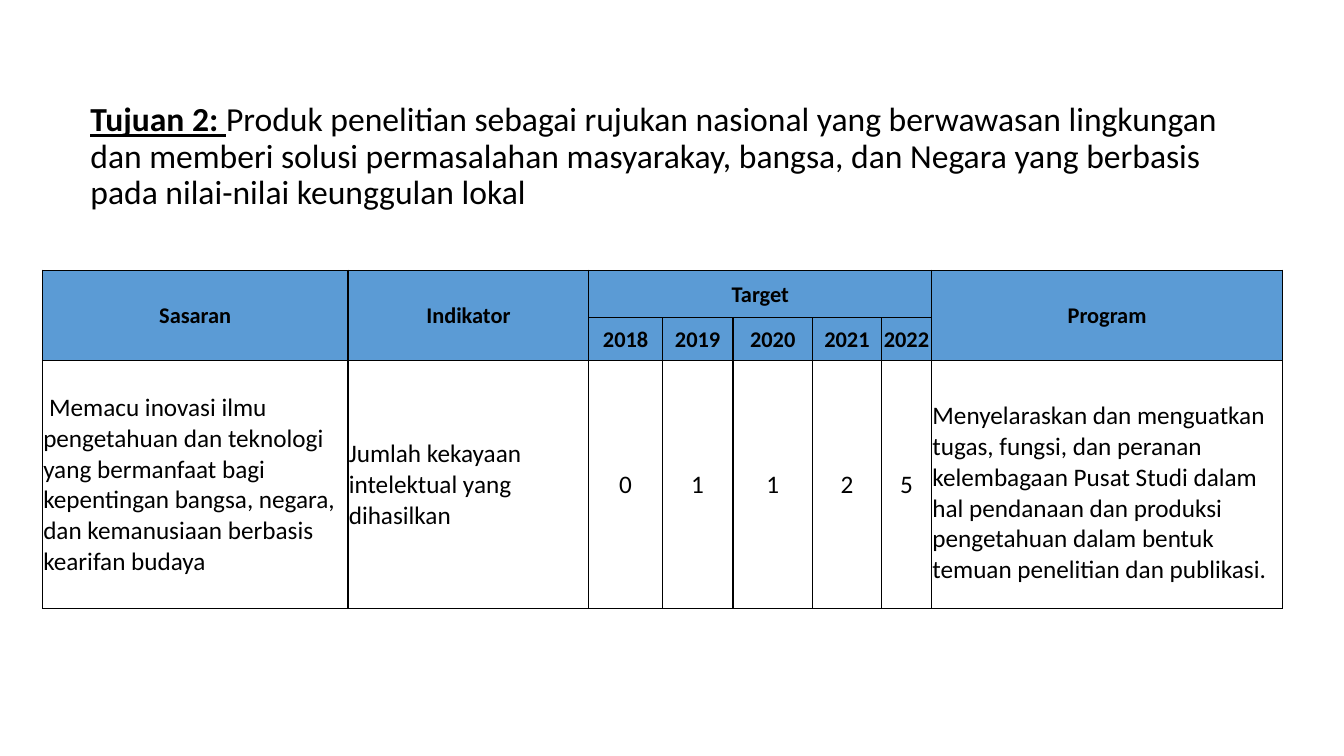
"""Builds the slide on goal 2: heading and target table."""
from lxml import etree
from pptx import Presentation
from pptx.dml.color import RGBColor
from pptx.enum.text import MSO_ANCHOR, PP_ALIGN
from pptx.oxml.ns import qn
from pptx.util import Cm, Pt

BLACK = RGBColor(0x00, 0x00, 0x00)
BLUE = RGBColor(0x5B, 0x9B, 0xD5)
MIDDLE, BOTTOM = MSO_ANCHOR.MIDDLE, MSO_ANCHOR.BOTTOM
LEFT, CENTER = PP_ALIGN.LEFT, PP_ALIGN.CENTER
FONT = "Calibri"


def add_run(p, text, size, bold=False, underline=False):
    r = p.add_run()
    r.text = text
    r.font.name = FONT
    r.font.size = Pt(size)
    r.font.bold = bold
    r.font.underline = underline
    r.font.color.rgb = BLACK


def add_borders(cell):
    tcPr = cell._tc.get_or_add_tcPr()
    for side in ("lnL", "lnR", "lnT", "lnB"):
        ln = etree.SubElement(tcPr, qn(f"a:{side}"), w=str(Pt(1)))
        fill = etree.SubElement(ln, qn("a:solidFill"))
        etree.SubElement(fill, qn("a:srgbClr"), val=str(BLACK))


prs = Presentation()
prs.slide_width, prs.slide_height = Cm(33.87), Cm(19.05)
s = prs.slides.add_slide(prs.slide_layouts[6])

title = s.shapes.add_textbox(Cm(2.03), Cm(2.54), Cm(29.21), Cm(2.84))
tf = title.text_frame
tf.word_wrap = True
tf.vertical_anchor = MIDDLE
p = tf.paragraphs[0]
p.line_spacing = 0.9
add_run(p, "Tujuan 2: ", 24, bold=True, underline=True)
add_run(p, "Produk penelitian sebagai rujukan nasional yang berwawasan lingkungan "
        "dan memberi solusi permasalahan masyarakay, bangsa, dan Negara yang "
        "berbasis pada nilai-nilai keunggulan lokal", 24)

widths = [7.7, 6.07, 1.85, 1.78, 2.01, 1.73, 1.27, 8.84]
heights = [1.2, 1.07, 6.25]
rows = [
    ["Sasaran", "Indikator", "Target", "", "", "", "", "Program"],
    ["", "", "2018", "2019", "2020", "2021", "2022", ""],
    ["Memacu inovasi ilmu pengetahuan dan teknologi yang bermanfaat bagi "
     "kepentingan bangsa, negara, dan kemanusiaan berbasis kearifan budaya",
     "Jumlah kekayaan intelektual yang dihasilkan",
     "0", "1", "1", "2", "5",
     "Menyelaraskan dan menguatkan tugas, fungsi, dan peranan kelembagaan "
     "Pusat Studi dalam hal pendanaan dan produksi pengetahuan dalam bentuk "
     "temuan penelitian dan publikasi."],
]
frame = s.shapes.add_table(len(rows), len(widths), Cm(1.07), Cm(6.81),
                           Cm(sum(widths)), Cm(sum(heights)))
table = frame.table
table.first_row = table.horz_banding = False
for column, width in zip(table.columns, widths):
    column.width = Cm(width)
for row, height in zip(table.rows, heights):
    row.height = Cm(height)

for i, texts in enumerate(rows):
    header = i < 2
    for j, text in enumerate(texts):
        cell = table.cell(i, j)
        cell.margin_left = cell.margin_right = cell.margin_top = Cm(0.02)
        cell.margin_bottom = 0
        cell.vertical_anchor = MIDDLE
        add_borders(cell)
        if header:
            cell.fill.solid()
            cell.fill.fore_color.rgb = BLUE
        else:
            cell.fill.background()
        p = cell.text_frame.paragraphs[0]
        p.alignment = CENTER if header or 2 <= j <= 6 else LEFT
        if text:
            add_run(p, text, 16 if header else 18, bold=header)

for j in (0, 1, 7):
    table.cell(0, j).merge(table.cell(1, j))
table.cell(0, 2).merge(table.cell(0, 6))

goal, program = table.cell(2, 0), table.cell(2, 7)
goal.text_frame.paragraphs[0]._p.get_or_add_pPr().set("indent", str(Cm(0.15)))
program.vertical_anchor = BOTTOM
program.margin_bottom = Cm(0.58)

prs.save("out.pptx")
